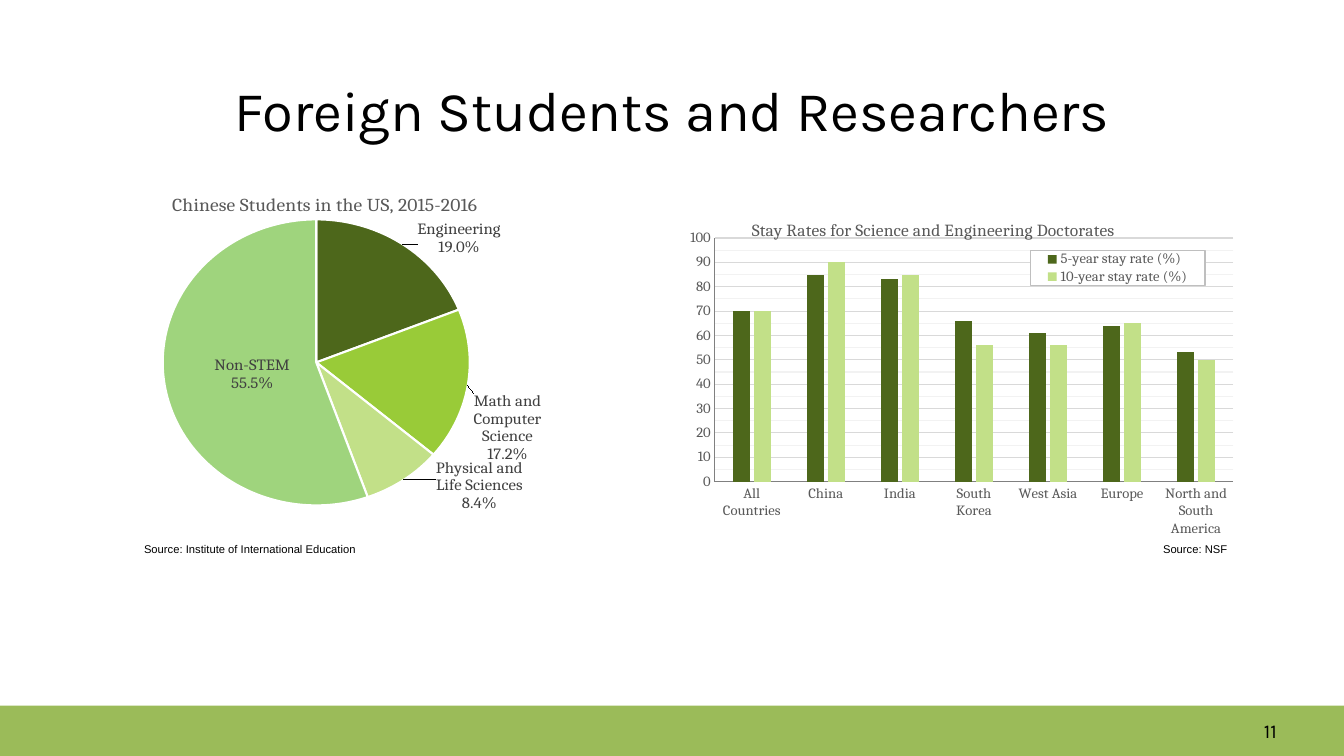
from lxml import etree
from pptx import Presentation
from pptx.chart.data import CategoryChartData
from pptx.dml.color import RGBColor
from pptx.enum.chart import XL_CHART_TYPE, XL_LABEL_POSITION, XL_LEGEND_POSITION, XL_TICK_MARK
from pptx.enum.shapes import MSO_SHAPE
from pptx.enum.text import MSO_ANCHOR, PP_ALIGN
from pptx.oxml import parse_xml
from pptx.oxml.ns import nsdecls, qn
from pptx.util import Cm, Pt

BLACK = RGBColor(0x00, 0x00, 0x00)
WHITE = RGBColor(0xFF, 0xFF, 0xFF)
LABEL_GREY = RGBColor(0x40, 0x40, 0x40)
TEXT_GREY = RGBColor(0x59, 0x59, 0x59)
AXIS_GREY = RGBColor(0x80, 0x80, 0x80)
BORDER_GREY = RGBColor(0xBF, 0xBF, 0xBF)
GRID_GREY = RGBColor(0xD9, 0xD9, 0xD9)
MINOR_GREY = RGBColor(0xF2, 0xF2, 0xF2)
BAND_GREEN = RGBColor(0x9B, 0xBB, 0x59)
DARK_GREEN = RGBColor(0x4D, 0x67, 0x1B)
LIME = RGBColor(0x99, 0xCB, 0x38)
PALE_GREEN = RGBColor(0xC2, 0xE0, 0x88)
MINT = RGBColor(0x9F, 0xD4, 0x7D)

FIELDS = [
    ("Engineering", 0.19, DARK_GREEN, XL_LABEL_POSITION.OUTSIDE_END, (0.02, 0.05)),
    ("Math and Computer Science", 0.172, LIME, XL_LABEL_POSITION.OUTSIDE_END, (0, 0.02)),
    ("Physical and Life Sciences", 0.084, PALE_GREEN, XL_LABEL_POSITION.OUTSIDE_END, (0.05, -0.04)),
    ("Non-STEM", 0.555, MINT, XL_LABEL_POSITION.CENTER, (0.02, 0)),
]
COUNTRIES = ["All Countries", "China", "India", "South Korea", "West Asia", "Europe",
             "North and South America"]
STAY_RATES = [
    ("5-year stay rate (%)", [70, 85, 83, 66, 61, 64, 53], DARK_GREEN),
    ("10-year stay rate (%)", [70, 90, 85, 56, 56, 65, 50], PALE_GREEN),
]


def style_font(font, name, size, color):
    font.name = name
    font.size = Pt(size)
    font.bold = False
    font.color.rgb = color


def style_line(line, color, width=0.75):
    line.color.rgb = color
    line.width = Pt(width)


def shape_style(line_color, fill_color=None):
    fill = f'<a:solidFill><a:srgbClr val="{fill_color}"/></a:solidFill>' if fill_color else ""
    return parse_xml(
        f'<c:spPr {nsdecls("c", "a")}>{fill}<a:ln w="9525"><a:solidFill>'
        f'<a:srgbClr val="{line_color}"/></a:solidFill></a:ln></c:spPr>')


def place(parent, index, x, y, w=None, h=None, edge=True, inner=False):
    old = parent.find(qn("c:layout"))
    if old is not None:
        parent.remove(old)
    layout = etree.Element(qn("c:layout"))
    manual = etree.SubElement(layout, qn("c:manualLayout"))
    values = [("layoutTarget", "inner")] if inner else []
    values += [("xMode", "edge"), ("yMode", "edge")] if edge else []
    values += [("x", x), ("y", y)]
    values += [("w", w), ("h", h)] if w else []
    for tag, value in values:
        etree.SubElement(manual, qn("c:" + tag)).set("val", str(value))
    parent.insert(index, layout)


class Deck:
    heading_font = "Karla"
    chart_font = "Cambria"
    note_font = "Arial"

    def __init__(self):
        self.prs = Presentation()
        self.prs.slide_width, self.prs.slide_height = Cm(33.87), Cm(19.05)
        self.s = self.prs.slides.add_slide(self.prs.slide_layouts[5])

    def band(self, *box):
        sp = self.s.shapes.add_shape(MSO_SHAPE.RECTANGLE, *map(Cm, box))
        sp.shadow.inherit = False
        sp.fill.solid()
        sp.fill.fore_color.rgb = BAND_GREEN
        sp.line.fill.background()

    def title(self, text, *box):
        sp = self.s.shapes.title
        sp.left, sp.top, sp.width, sp.height = map(Cm, box)
        sp.text_frame.vertical_anchor = MSO_ANCHOR.MIDDLE
        p = sp.text_frame.paragraphs[0]
        p.alignment = PP_ALIGN.CENTER
        self.run(p, text, self.heading_font, 40)

    def run(self, p, text, font, size, color=BLACK):
        r = p.add_run()
        r.text = text
        style_font(r.font, font, size, color)

    def text(self, text, *box, font=note_font, size=8, wrap=False, anchor=MSO_ANCHOR.TOP):
        tf = self.s.shapes.add_textbox(*map(Cm, box)).text_frame
        tf.word_wrap = wrap
        tf.vertical_anchor = anchor
        p = tf.paragraphs[0]
        self.run(p, text, font, size)

    def chart(self, kind, categories, series, title, title_size, title_at, plot_at, *box):
        data = CategoryChartData()
        data.categories = categories
        for name, values in series:
            data.add_series(name, values)
        chart = self.s.shapes.add_chart(kind, *map(Cm, box), data).chart
        style_font(chart.font, self.chart_font, 10.5, TEXT_GREY)
        chart.has_legend = False
        chart.has_title = True
        p = chart.chart_title.text_frame.paragraphs[0]
        self.run(p, title, self.chart_font, title_size, TEXT_GREY)
        place(chart.chart_title._element, 1, *title_at)
        chart.chart_title._element.find(qn("c:overlay")).set("val", "1")
        place(chart.plots[0]._element.getparent(), 0, *plot_at, inner=True)
        return chart

    def pie(self, title, fields, *box):
        chart = self.chart(XL_CHART_TYPE.PIE, [f[0] for f in fields],
                           [("Series 1", [f[1] for f in fields])], title, 14,
                           (0.23, 0.04), (0.22, 0.13, 0.53, 0.85), *box)
        plot = chart.plots[0]
        plot.vary_by_categories = True
        for i, (_, _, color, position, _) in enumerate(fields):
            point = plot.series[0].points[i]
            point.format.fill.solid()
            point.format.fill.fore_color.rgb = color
            style_line(point.format.line, WHITE, 1.5)
            label = point.data_label
            style_font(label.font, self.chart_font, 12, LABEL_GREY)
            label.position = position
        labels = plot.series[0]._element.find(qn("c:dLbls"))
        for label, field in zip(labels.findall(qn("c:dLbl")), fields):
            place(label, 1, *field[4], edge=False)
            number = etree.Element(qn("c:numFmt"), formatCode="0.0%", sourceLinked="0")
            label.insert(2, number)
            label.find(qn("c:showCatName")).set("val", "1")
            etree.SubElement(label, qn("c:separator")).text = "\n"

    def columns(self, title, categories, series, *box):
        chart = self.chart(XL_CHART_TYPE.COLUMN_CLUSTERED, categories,
                           [item[:2] for item in series], title, 12.5,
                           (0.13, 0.02), (0.07, 0.09, 0.92, 0.77), *box)
        plot = chart.plots[0]
        plot.vary_by_categories = False
        plot.gap_width, plot.overlap = 219, -27
        for ser, (_, _, color) in zip(plot.series, series):
            ser.format.fill.solid()
            ser.format.fill.fore_color.rgb = color
        for axis in (chart.category_axis, chart.value_axis):
            axis.major_tick_mark = axis.minor_tick_mark = XL_TICK_MARK.NONE
            style_font(axis.tick_labels.font, self.chart_font, 10.5, TEXT_GREY)
            style_line(axis.format.line, AXIS_GREY)
        axis = chart.value_axis
        axis.minimum_scale, axis.maximum_scale = 0, 100
        axis.major_unit, axis.minor_unit = 10, 5
        axis.has_major_gridlines = axis.has_minor_gridlines = True
        style_line(axis.major_gridlines.format.line, GRID_GREY)
        axis._element.find(qn("c:minorGridlines")).append(shape_style(MINOR_GREY))
        self.legend(chart)

    def legend(self, chart):
        chart.has_legend = True
        legend = chart.legend
        legend.position = XL_LEGEND_POSITION.RIGHT
        legend.include_in_layout = True
        style_font(legend.font, self.chart_font, 10.5, TEXT_GREY)
        place(legend._element, 1, 0.63, 0.13, 0.31, 0.11)
        legend._element.find(qn("c:overlay")).addnext(shape_style(BORDER_GREY, WHITE))


def main():
    deck = Deck()
    deck.band(0, 17.78, 33.87, 1.27)
    deck.title("Foreign Students and Researchers", 1.7, 1.47, 30.48, 2.54)
    deck.pie("Chinese Students in the US, 2015-2016", FIELDS, 0.89, 4.42, 14.6, 9.12)
    deck.text("Source: Institute of International Education", 3.38, 13.54, 5.92, 0.61)
    deck.columns("Stay Rates for Science and Engineering Doctorates", COUNTRIES, STAY_RATES,
                 17.02, 5.28, 14.2, 8.26)
    deck.text("Source: NSF", 29.06, 13.54, 2.16, 0.61)
    deck.text("11", 31.6, 17.91, 1.7, 1.02, font=deck.heading_font, size=14, wrap=True,
              anchor=MSO_ANCHOR.MIDDLE)
    deck.prs.save("out.pptx")


if __name__ == "__main__":
    main()
